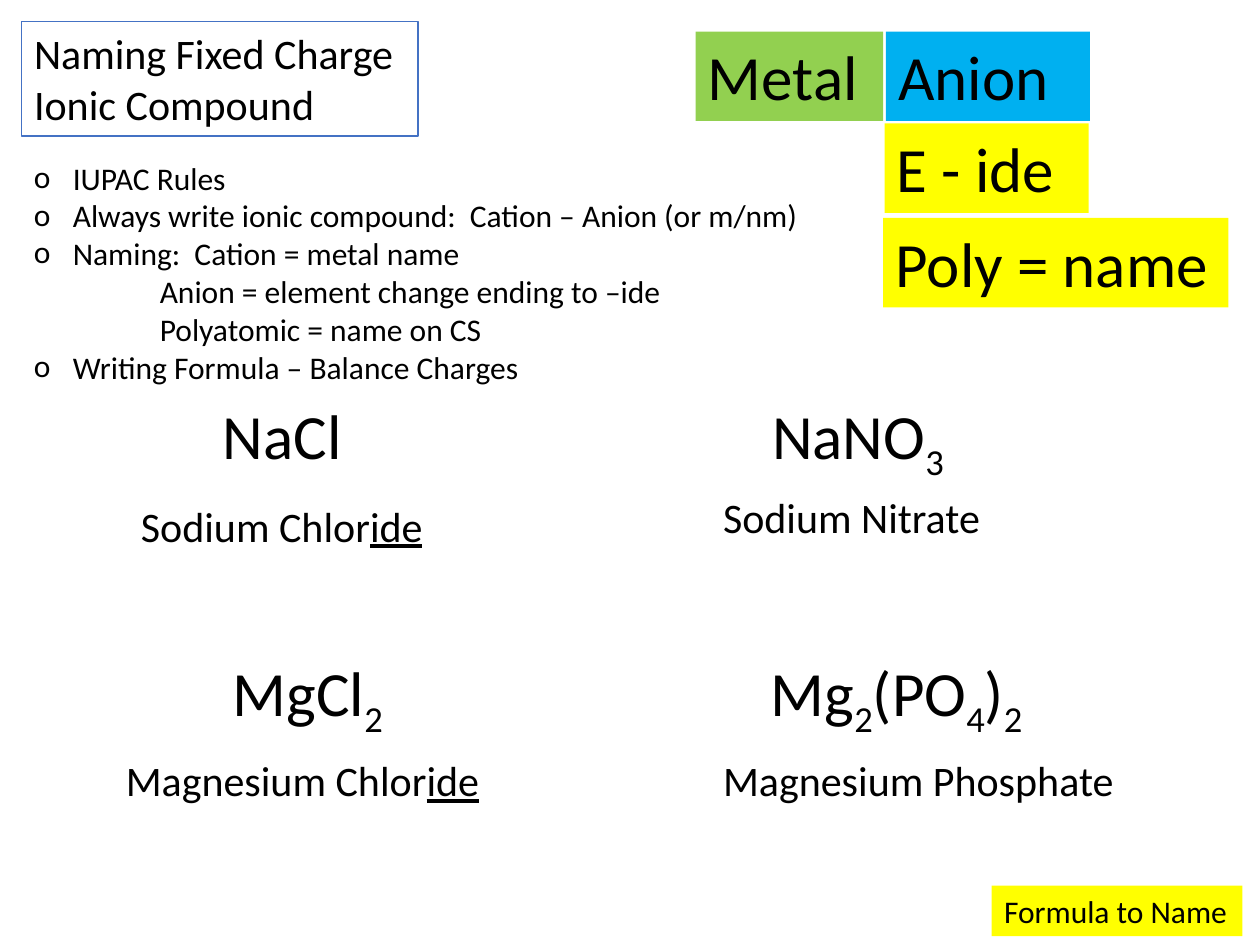
from lxml import etree
from pptx import Presentation
from pptx.dml.color import RGBColor
from pptx.enum.shapes import MSO_SHAPE
from pptx.enum.text import MSO_ANCHOR, MSO_AUTO_SIZE, PP_ALIGN
from pptx.oxml.ns import qn
from pptx.util import Inches, Pt

RECTANGLE = MSO_SHAPE.RECTANGLE
TOP = MSO_ANCHOR.TOP
LEFT = PP_ALIGN.LEFT
GROW = MSO_AUTO_SIZE.SHAPE_TO_FIT_TEXT
FIXED = MSO_AUTO_SIZE.NONE
TITLE_ONLY = 5

BLACK = RGBColor(0x00, 0x00, 0x00)
WHITE = RGBColor(0xFF, 0xFF, 0xFF)
BLUE = RGBColor(0x44, 0x72, 0xC4)
SKY = RGBColor(0x00, 0xB0, 0xF0)
GREEN = RGBColor(0x92, 0xD0, 0x50)
YELLOW = RGBColor(0xFF, 0xFF, 0x00)

FONT = "Calibri"
SMALL, MEDIUM, LARGE = 18, 24, 36
HEIGHTS = {SMALL: 0.4, MEDIUM: 0.5, LARGE: 0.71}
BULLET_INDENT = 0.31
DETAIL_INDENT = 1.0

TITLE = ["Naming Fixed Charge", "Ionic Compound"]

# text, is a bullet
RULES = [
    ("IUPAC Rules", True),
    ("Always write ionic compound:  Cation – Anion (or m/nm)", True),
    ("Naming:  Cation = metal name", True),
    ("Anion = element change ending to –ide", False),
    ("Polyatomic = name on CS", False),
    ("Writing Formula – Balance Charges", True),
]

# left, top, width, size, spans; a span is (text, style)
COMPOUNDS = [
    (1.67, 3.1, 1.16, LARGE, [("NaCl", "")]),
    (1.02, 3.92, 2.46, MEDIUM, [("Sodium Chlor", ""), ("ide", "underline")]),
    (6.03, 3.1, 1.6, LARGE, [("NaNO", ""), ("3", "subscript")]),
    (5.64, 3.85, 2.26, MEDIUM, [("Sodium Nitrate", "")]),
    (6.02, 5.14, 2.28, LARGE, [("Mg", ""), ("2", "subscript"), ("(PO", ""),
                               ("4", "subscript"), (")", ""), ("2", "subscript")]),
    (0.9, 5.94, 3.03, MEDIUM, [("Magnesium Chlor", ""), ("ide", "underline")]),
    (1.75, 5.14, 1.43, LARGE, [("MgCl", ""), ("2", "subscript")]),
    (5.64, 5.94, 3.33, MEDIUM, [("Magnesium Phosphate", "")]),
]

# left, top, width, size, text, fill, wraps
LABELS = [
    (7.87, 7.03, 1.99, SMALL, "Formula to Name", YELLOW, False),
    (7.03, 0.25, 1.62, LARGE, "Anion", SKY, True),
    (5.52, 0.25, 1.49, LARGE, "Metal", GREEN, True),
    (7.02, 0.98, 1.62, LARGE, "E - ide", YELLOW, True),
    (7.01, 1.73, 2.74, LARGE, "Poly = name", YELLOW, True),
]


def write(box, paragraphs, size, wrap=False, fit=GROW):
    """Fill a box with paragraphs, each a list of (text, style) spans."""
    frame = box.text_frame
    for name, value in {"word_wrap": wrap, "auto_size": fit,
                        "vertical_anchor": TOP}.items():
        setattr(frame, name, value)
    for index, spans in enumerate(paragraphs):
        para = frame.add_paragraph() if index else frame.paragraphs[0]
        para.alignment = LEFT
        for text, style in spans:
            span = para.add_run()
            span.text = text
            span.font.color.rgb = BLACK
            for name, value in {"name": FONT, "size": Pt(size)}.items():
                setattr(span.font, name, value)
            if style == "underline":
                span.font.underline = True
            elif style == "subscript":
                span.font._element.set("baseline", "-25000")


def indent(para, bullet):
    properties = para._p.get_or_add_pPr()
    margin = BULLET_INDENT if bullet else DETAIL_INDENT
    properties.set("marL", str(Inches(margin)))
    properties.set("indent", str(-Inches(BULLET_INDENT) if bullet else 0))
    if bullet:
        etree.SubElement(properties, qn("a:buFont")).set("typeface", FONT)
        etree.SubElement(properties, qn("a:buChar")).set("char", "o")


def add_title(page):
    box = page.shapes.title
    for name, value in {"left": 0.17, "top": 0.17, "width": 3.15, "height": 0.91}.items():
        setattr(box, name, Inches(value))
    box.fill.solid()
    box.fill.fore_color.rgb = WHITE
    box.line.color.rgb = BLUE
    box.line.width = Pt(1)
    write(box, [[(line, "")] for line in TITLE], MEDIUM, wrap=True, fit=FIXED)


def add_rules(page):
    box = page.shapes.add_textbox(Inches(0.17), Inches(1.21), Inches(6.34), Inches(1.92))
    write(box, [[(text, "")] for text, _ in RULES], SMALL)
    for para, (_, bullet) in zip(box.text_frame.paragraphs, RULES):
        indent(para, bullet)


def add_compounds(page):
    for left, top, width, size, spans in COMPOUNDS:
        box = page.shapes.add_textbox(Inches(left), Inches(top), Inches(width),
                                      Inches(HEIGHTS[size]))
        write(box, [spans], size)


def add_labels(page):
    for left, top, width, size, text, fill, wrap in LABELS:
        box = page.shapes.add_shape(RECTANGLE, Inches(left), Inches(top),
                                    Inches(width), Inches(HEIGHTS[size]))
        box.shadow.inherit = False
        box.fill.solid()
        box.fill.fore_color.rgb = fill
        box.line.fill.background()
        write(box, [[(text, "")]], size, wrap)


def main():
    deck = Presentation()
    deck.slide_width, deck.slide_height = Inches(10), Inches(7.5)
    page = deck.slides.add_slide(deck.slide_layouts[TITLE_ONLY])
    add_title(page)
    add_rules(page)
    add_compounds(page)
    add_labels(page)
    deck.save("out.pptx")


if __name__ == "__main__":
    main()
